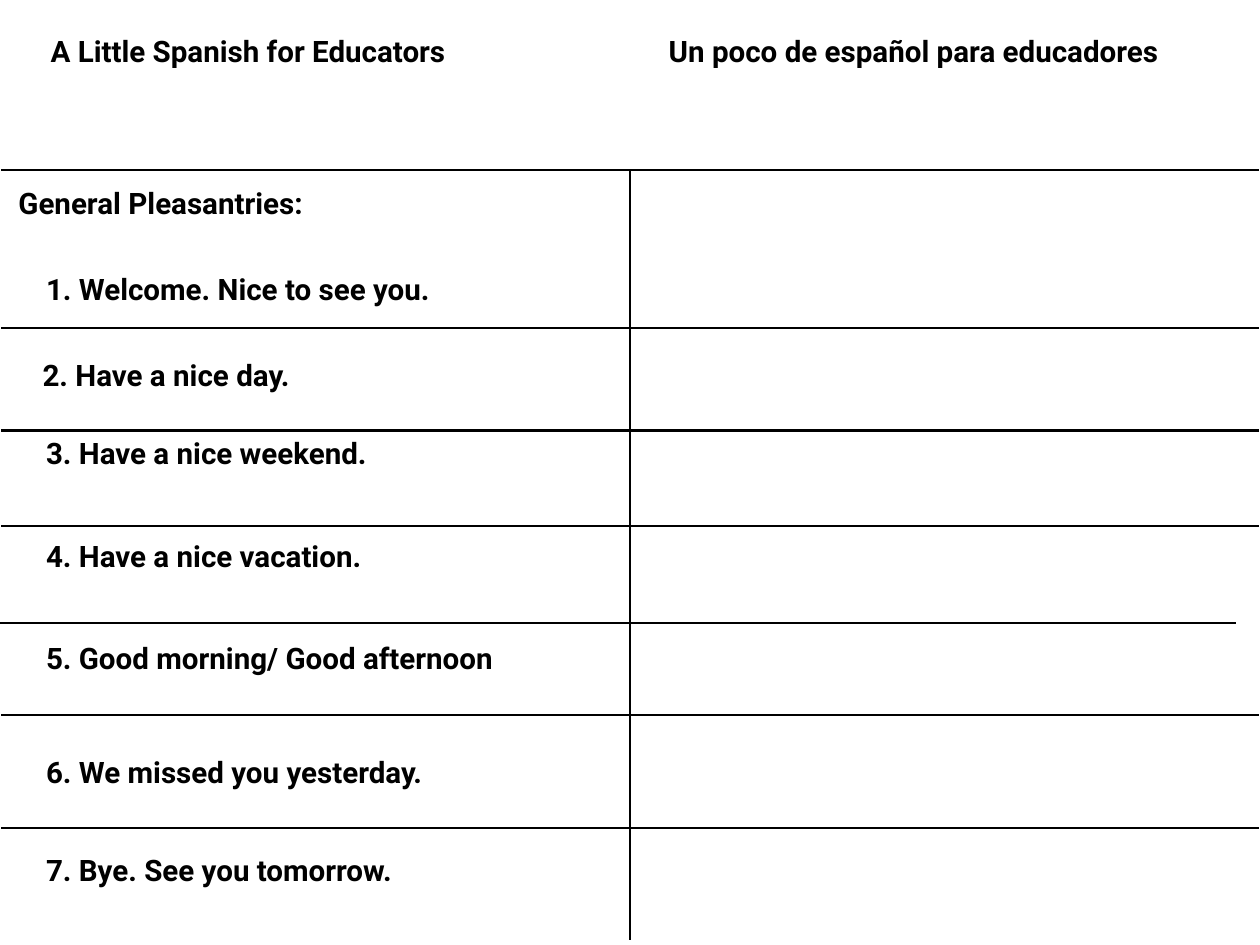
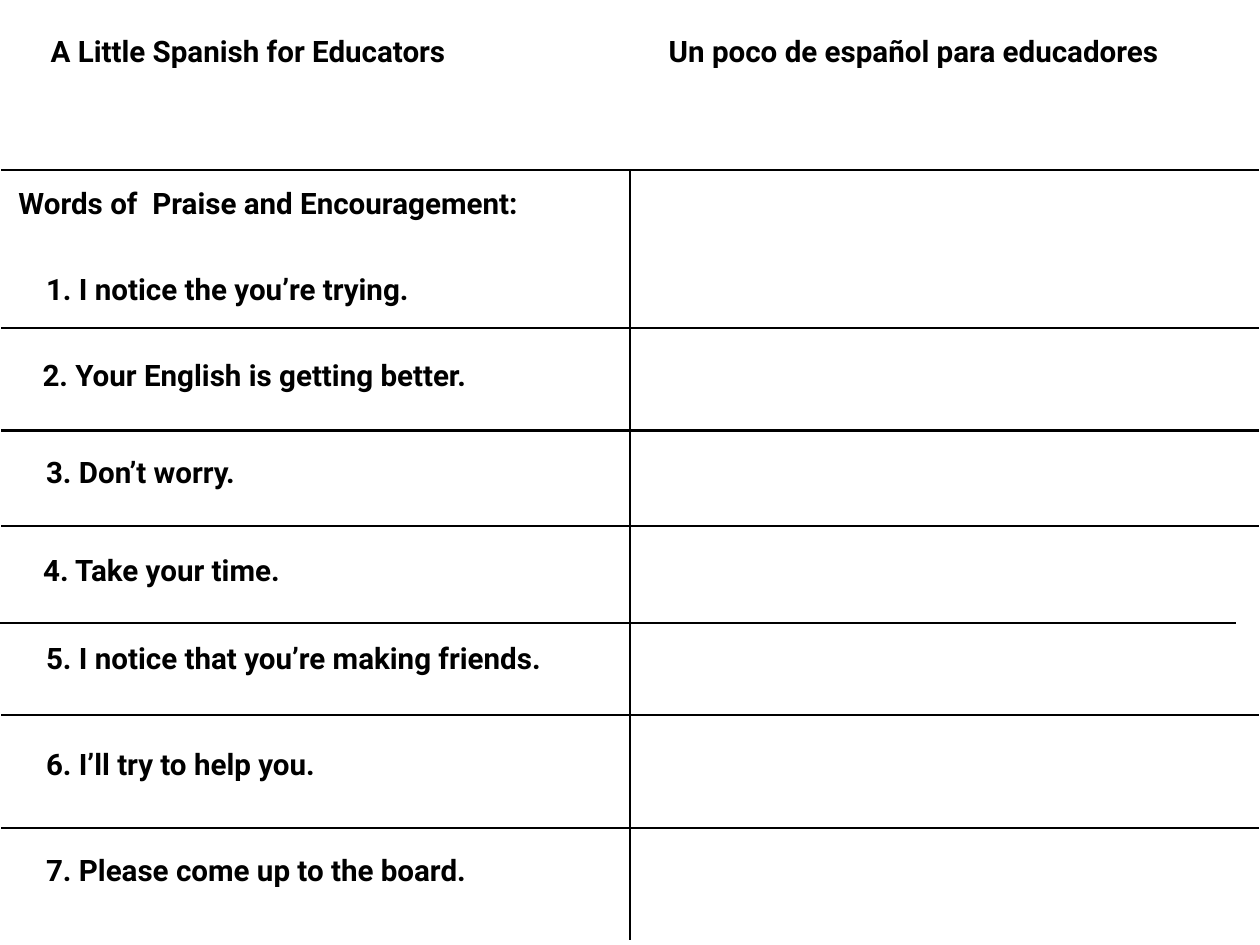
from dataclasses import dataclass

from pptx import Presentation
from pptx.dml.color import RGBColor
from pptx.enum.shapes import MSO_CONNECTOR as Connector
from pptx.enum.text import MSO_ANCHOR as Anchor, MSO_AUTO_SIZE as AutoSize, PP_ALIGN as Align
from pptx.oxml.ns import qn
from pptx.util import Cm, Pt
from lxml.etree import SubElement


@dataclass(frozen=True)
class Theme:
    font: str = "Roboto"
    ink: RGBColor = RGBColor(0x00, 0x00, 0x00)
    paper: RGBColor = RGBColor(0xFF, 0xFF, 0xFF)
    text_size: Pt = Pt(24)
    rule_width: Pt = Pt(2)


THEME = Theme()

# Content: headers are shared; a text is (words, left, top, width) in cm
ENGLISH_HEADER = ("A Little Spanish for Educators", 1.3, 0.81, 12.37)
SPANISH_HEADER = ("Un poco de español para educadores", 19.02, 0.81, 15.44)

# Each phrase is (words, left, top, width); its number follows its place
PAGES = [
    {
        "heading": ("General Pleasantries:", 0.38, 5.18, 9.17),
        "phrases": [
            ("Welcome. Nice to see you.", 1.17, 7.65, 11.91),
            ("Have a nice day.", 1.07, 10.11, 7.8),
            ("Have a nice weekend.", 1.17, 12.34, 10.08),
            ("Have a nice vacation.", 1.17, 15.29, 9.86),
            ("Good morning/ Good afternoon", 1.17, 18.24, 13.97),
            ("We missed you yesterday.", 1.17, 21.49, 11.66),
            ("Bye. See you tomorrow.", 1.17, 24.31, 10.85),
        ],
    },
    {
        "heading": ("Words of  Praise and Encouragement:", 0.38, 5.18, 15.8),
        "phrases": [
            ("I notice the you’re trying.", 1.17, 7.65, 11.51),
            ("Your English is getting better.", 1.07, 10.11, 13.06),
            ("Don’t worry.", 1.17, 12.9, 6.15),
            ("Take your time.", 1.09, 15.7, 7.42),
            ("I notice that you’re making friends.", 1.17, 18.24, 15.27),
            ("I’ll try to help you.", 1.17, 21.26, 8.43),
            ("Please come up to the board.", 1.17, 24.31, 13.11),
        ],
    },
]

# Geometry in cm
SLIDE_WIDTH, SLIDE_HEIGHT = 36.12, 27.1
MARGIN = 0.03
TEXT_HEIGHT, TEXT_INSET = 1.27, 0.15
GRID_TOP, GRID_BOTTOM = 4.88, 26.97
# (height, sideways shift) of each horizontal rule
ROW_RULES = [(GRID_TOP, 0), (9.4, 0), (12.34, 0), (15.09, 0),
             (17.86, -0.66), (20.5, 0), (23.75, 0)]


def write_text(shape, words, left, top, width):
    """Place a text shape and set its words in the shared style."""
    shape.left, shape.top = Cm(left), Cm(top)
    shape.width, shape.height = Cm(width), Cm(TEXT_HEIGHT)
    frame = shape.text_frame
    frame.word_wrap = False
    frame.auto_size = AutoSize.SHAPE_TO_FIT_TEXT
    frame.vertical_anchor = Anchor.MIDDLE
    frame.margin_left = frame.margin_right = Cm(TEXT_INSET)
    frame.margin_top = frame.margin_bottom = Cm(TEXT_INSET)
    paragraph = frame.paragraphs[0]
    paragraph.alignment = Align.LEFT
    run = paragraph.add_run()
    run.text = words
    run.font.name = THEME.font
    run.font.size = THEME.text_size
    run.font.bold = True
    run.font.color.rgb = THEME.ink


def add_text(slide, words, left, top, width):
    box = slide.shapes.add_textbox(Cm(left), Cm(top), Cm(width), Cm(TEXT_HEIGHT))
    write_text(box, words, left, top, width)


def add_rule(slide, x1, y1, x2, y2):
    rule = slide.shapes.add_connector(Connector.STRAIGHT, Cm(x1), Cm(y1), Cm(x2), Cm(y2))
    rule.line.color.rgb = THEME.ink
    rule.line.width = THEME.rule_width
    SubElement(rule._element.spPr, qn("a:effectLst"))


def add_grid(slide):
    for y, shift in ROW_RULES:
        add_rule(slide, MARGIN + shift, y, SLIDE_WIDTH - MARGIN + shift, y)
    middle = SLIDE_WIDTH / 2
    add_rule(slide, middle, GRID_TOP, middle, GRID_BOTTOM)


def add_page(presentation, page):
    slide = presentation.slides.add_slide(presentation.slide_layouts[5])
    slide.background.fill.solid()
    slide.background.fill.fore_color.rgb = THEME.paper
    # Shared frame
    write_text(slide.shapes.title, *ENGLISH_HEADER)
    add_text(slide, *SPANISH_HEADER)
    add_grid(slide)
    # Heading and numbered phrases
    add_text(slide, *page["heading"])
    for number, (words, *place) in enumerate(page["phrases"], start=1):
        add_text(slide, f"{number}. {words}", *place)


def main():
    presentation = Presentation()
    presentation.slide_width = Cm(SLIDE_WIDTH)
    presentation.slide_height = Cm(SLIDE_HEIGHT)
    for page in PAGES:
        add_page(presentation, page)
    presentation.save("out.pptx")


if __name__ == "__main__":
    main()
